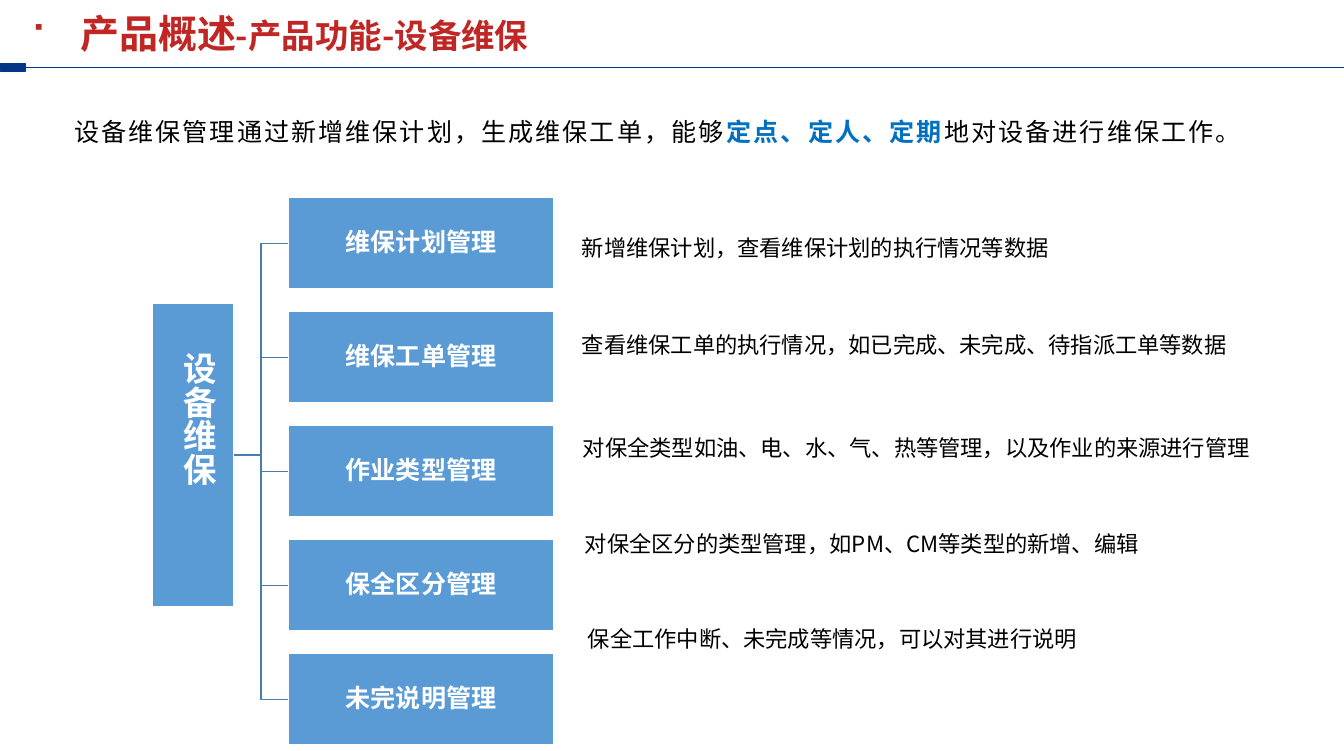
from pptx import Presentation
from pptx.dml.color import RGBColor
from pptx.enum.shapes import MSO_CONNECTOR as Link, MSO_SHAPE as Preset
from pptx.enum.text import MSO_ANCHOR as Anchor, PP_ALIGN as Align
from pptx.oxml.ns import qn
from pptx.util import Inches, Pt
from lxml import etree

FONT = "Noto Sans CJK SC"
WIDTH, HEIGHT = 13.39, 7.48
NAVY, RED, BLUE, KEYWORD = "013885", "C02624", "5B9BD5", "0070C0"
BRANCH, WHITE, BLACK = "497CAB", "FFFFFF", "000000"

# function name, description, left and top of the description in the detail column
FUNCTIONS = [
    ("维保计划管理", "新增维保计划，查看维保计划的执行情况等数据", 0, 0),
    ("维保工单管理", "查看维保工单的执行情况，如已完成、未完成、待指派工单等数据", 0, 0.97),
    ("作业类型管理", "对保全类型如油、电、水、气、热等管理，以及作业的来源进行管理", 0.01, 1.99),
    ("保全区分管理", "对保全区分的类型管理，如PM、CM等类型的新增、编辑", 0.03, 2.95),
    ("未完说明管理", "保全工作中断、未完成等情况，可以对其进行说明", 0.06, 3.9),
]


def color(value):
    return RGBColor.from_string(value)


def add_run(paragraph, text, size, ink, bold=False, spacing=0):
    run = paragraph.add_run()
    run.text = text
    font = run.font
    font.name, font.size, font.bold = FONT, Pt(size), bold
    font.color.rgb = color(ink)
    props = font._element
    etree.SubElement(props, qn("a:ea"), typeface=FONT)
    if spacing:
        props.set("spc", str(int(spacing * 100)))


def add_textbox(slide, left, top, width, height, wrap=True):
    box = slide.shapes.add_textbox(*map(Inches, (left, top, width, height)))
    box.text_frame.word_wrap = wrap
    return box.text_frame


def add_block(slide, left, top, width, height, fill, line, weight):
    block = slide.shapes.add_shape(Preset.RECTANGLE, *map(Inches, (left, top, width, height)))
    block.shadow.inherit = False
    block.fill.solid()
    block.fill.fore_color.rgb = color(fill)
    block.line.color.rgb = color(line)
    block.line.width = Pt(weight)
    return block


def add_link(slide, kind, start, end, ink, weight):
    link = slide.shapes.add_connector(kind, *map(Inches, (*start, *end)))
    link.line.color.rgb = color(ink)
    link.line.width = Pt(weight)
    etree.SubElement(link._element.spPr, qn("a:effectLst"))
    return link


def add_header(slide, width, rule_y):
    """Red bulleted title above a full-width rule with a navy tab."""
    tab = 0.24
    add_link(slide, Link.STRAIGHT, (width, rule_y), (tab, rule_y), NAVY, 0.5)
    add_block(slide, 0.01, rule_y - 0.04, tab, 0.08, NAVY, NAVY, 0.75)
    title = add_textbox(slide, 0.2, 0.04, 8.3, 0.55).paragraphs[0]
    props = title._p.get_or_add_pPr()
    props.set("marL", str(Inches(0.5)))
    props.set("indent", str(-Inches(0.5)))
    etree.SubElement(props, qn("a:buFont"), typeface="Wingdings")
    etree.SubElement(props, qn("a:buChar"), char="■")
    add_run(title, "产品概述", 28, RED, True)
    add_run(title, "-产品功能-设备维保", 24, RED, True)


def add_summary(slide, left, top, width, height):
    summary = add_textbox(slide, left, top, width, height).paragraphs[0]
    summary.line_spacing = 1.5
    add_run(summary, "设备维保管理通过新增维保计划，生成维保工单，能够", 18, BLACK, spacing=1.5)
    add_run(summary, "定点、定人、定期", 18, KEYWORD, True, 1.5)
    add_run(summary, "地对设备进行维保工作。", 18, BLACK, spacing=1.5)


def add_function_tree(slide, left, top, pitch):
    """Root block on the left, joined to one evenly spaced block per function."""
    root_w, root_h, gap = 0.81, 3.02, 0.54
    block_w, block_h = 2.65, 0.91
    root_top = top + 1.05
    root = add_block(slide, left, root_top, root_w, root_h, BLUE, WHITE, 1)
    block_left = left + root_w + gap
    for row, (name, *_) in enumerate(FUNCTIONS):
        block_top = top + row * pitch
        block = add_block(slide, block_left, block_top, block_w, block_h, BLUE, WHITE, 1)
        frame = block.text_frame
        frame.vertical_anchor = Anchor.MIDDLE
        frame.margin_left = frame.margin_right = Inches(0.01)
        frame.margin_top = frame.margin_bottom = Inches(0.01)
        label = frame.paragraphs[0]
        label.alignment = Align.CENTER
        label.line_spacing = 0.9
        add_run(label, name, 18, WHITE, True)
        branch = add_link(slide, Link.ELBOW, (left + root_w, root_top + root_h / 2),
                          (block_left, block_top + block_h / 2), BRANCH, 1)
        branch.begin_connect(root, 3)
        branch.end_connect(block, 1)
    root_label = add_textbox(slide, left + 0.1, root_top + 0.39, 0.61, 1.45, wrap=False)
    root_label._txBody.bodyPr.set("vert", "eaVert")
    add_run(root_label.paragraphs[0], "设备维保", 24, WHITE, True)


def add_details(slide, left, top, width):
    for _, detail, dx, dy in FUNCTIONS:
        paragraph = add_textbox(slide, left + dx, top + dy, width, 0.5).paragraphs[0]
        paragraph.line_spacing = 1.5
        add_run(paragraph, detail, 16, BLACK)


def main():
    deck = Presentation()
    deck.slide_width, deck.slide_height = Inches(WIDTH), Inches(HEIGHT)
    slide = deck.slides.add_slide(deck.slide_layouts[6])
    add_header(slide, WIDTH, 0.67)
    add_summary(slide, 0.64, 0.96, 12.19, 0.82)
    add_function_tree(slide, 1.52, 1.97, 1.135)
    add_details(slide, 5.7, 2.15, 7.14)
    deck.save("out.pptx")


if __name__ == "__main__":
    main()
